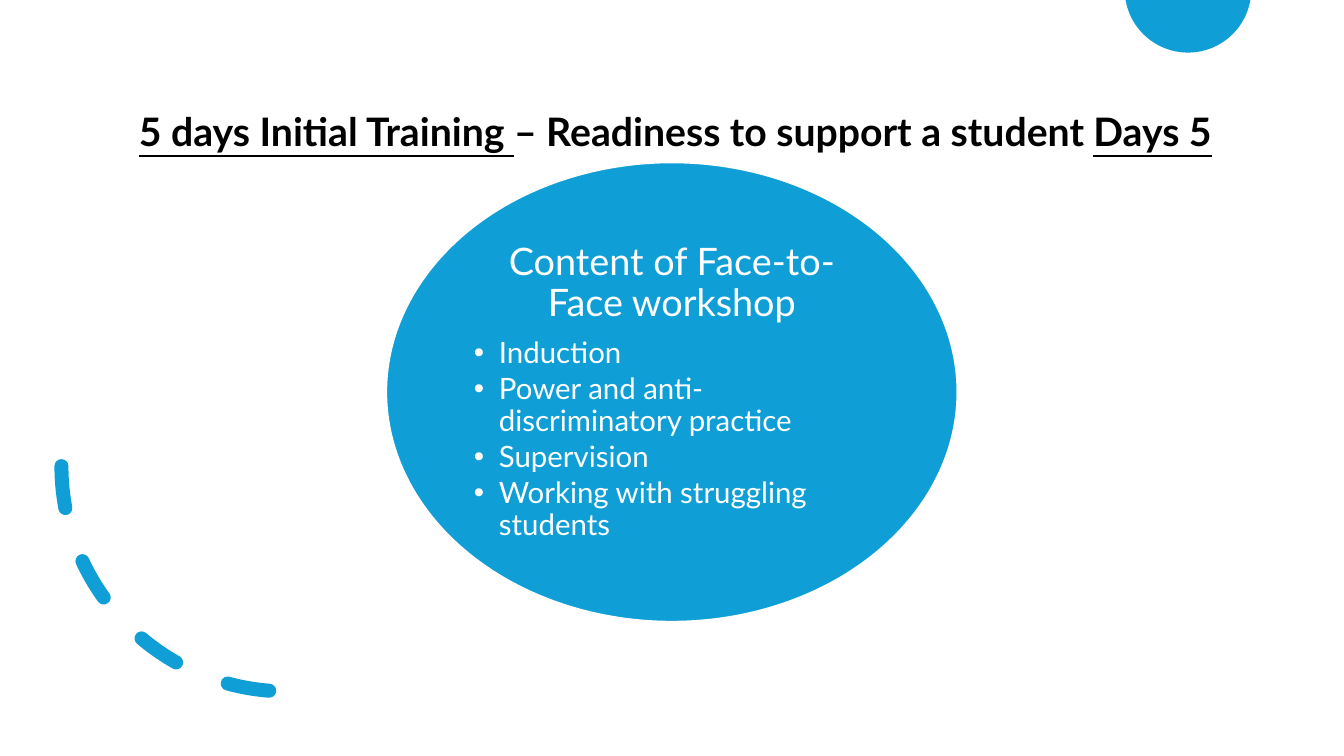
from dataclasses import dataclass
from math import asin, cos, pi, sin

from lxml import etree
from pptx import Presentation
from pptx.dml.color import RGBColor
from pptx.enum.dml import MSO_LINE
from pptx.enum.shapes import MSO_SHAPE
from pptx.enum.text import MSO_ANCHOR, MSO_AUTO_SIZE, PP_ALIGN
from pptx.oxml.ns import qn
from pptx.util import Pt

ARC, OVAL = MSO_SHAPE.ARC, MSO_SHAPE.OVAL
DASH = MSO_LINE.DASH
MIDDLE = MSO_ANCHOR.MIDDLE
GROW = MSO_AUTO_SIZE.SHAPE_TO_FIT_TEXT
LEFT, CENTER = PP_ALIGN.LEFT, PP_ALIGN.CENTER


@dataclass(frozen=True)
class Theme:
    blue: RGBColor = RGBColor(0x0F, 0x9E, 0xD5)
    white: RGBColor = RGBColor(0xFF, 0xFF, 0xFF)
    black: RGBColor = RGBColor(0, 0, 0)
    font: str = "Lato"
    title: float = 28
    head: float = 27
    item: float = 21


THEME = Theme()
TOPICS = [
    "Induction",
    "Power and anti-discriminatory practice",
    "Supervision",
    "Working with struggling students",
]


def add_box(slide, left, top, width, height, inset=None):
    box = slide.shapes.add_textbox(Pt(left), Pt(top), Pt(width), Pt(height))
    frame = box.text_frame
    frame.word_wrap = True
    if inset is not None:
        frame.margin_left = frame.margin_right = Pt(inset)
        frame.margin_top = frame.margin_bottom = Pt(inset)
    return frame


def set_para(para, align, line, after):
    para.alignment = align
    para.line_spacing = line
    para.space_before = Pt(0)
    para.space_after = Pt(after)


def add_run(para, text, size, color, bold=False, under=False):
    run = para.add_run()
    run.text = text
    font = run.font
    font.name, font.size = THEME.font, Pt(size)
    font.color.rgb = color
    font.bold, font.underline = bold, under


def add_bullet(para, indent):
    props = para._p.get_or_add_pPr()
    props.set("marL", str(Pt(indent)))
    props.set("indent", str(-Pt(indent)))
    etree.SubElement(props, qn("a:buFont")).set("typeface", "Arial")
    etree.SubElement(props, qn("a:buChar")).set("char", "•")


def add_cap(slide, mid, rise, radius):
    """Draw the part of a disc that shows below the top edge."""
    start = asin(rise / radius)
    steps = 90
    angles = [start + (pi - 2 * start) * i / steps for i in range(steps + 1)]
    points = [(Pt(mid + radius * cos(a)), Pt(max(0, radius * sin(a) - rise)))
              for a in angles]
    form = slide.shapes.build_freeform(*points[0])
    form.add_line_segments(points[1:], close=True)
    cap = form.convert_to_shape()
    cap.shadow.inherit = False
    cap.fill.solid()
    cap.fill.fore_color.rgb = THEME.blue
    cap.line.fill.background()


def add_arc(slide, left, top, size):
    arc = slide.shapes.add_shape(ARC, Pt(left), Pt(top), Pt(size), Pt(size))
    arc.shadow.inherit = False
    arc.rotation = 90
    arc._element.spPr.find(qn("a:xfrm")).set("flipV", "1")
    arc.fill.background()
    arc.line.color.rgb = THEME.blue
    arc.line.width = Pt(10)
    arc.line.dash_style = DASH
    arc.line._ln.set("cap", "rnd")


def add_oval(slide, left, top, width, height):
    oval = slide.shapes.add_shape(OVAL, Pt(left), Pt(top), Pt(width), Pt(height))
    oval.shadow.inherit = False
    oval.fill.solid()
    oval.fill.fore_color.rgb = THEME.blue
    oval.line.color.rgb = THEME.white
    oval.line.width = Pt(1.5)


def add_topics(slide):
    frame = add_box(slide, 335.5, 164.2, 288.7, 231.8, inset=2.9)
    frame.vertical_anchor = MIDDLE
    head = frame.paragraphs[0]
    set_para(head, CENTER, 0.9, 0.35 * THEME.head)
    add_run(head, "Content of Face-to-Face workshop", THEME.head, THEME.white)
    for topic in TOPICS:
        para = frame.add_paragraph()
        para.level = 1
        set_para(para, LEFT, 0.9, 0.15 * THEME.item)
        add_bullet(para, 18)
        add_run(para, topic, THEME.item, THEME.white)


def add_title(slide):
    frame = add_box(slide, 92.2, 70.6, 830.2, 42.5)
    frame.auto_size = GROW
    para = frame.paragraphs[0]
    set_para(para, LEFT, 1.07, 8)
    for text, under in [("5 days Initial Training ", True),
                        ("– Readiness to support a student ", False),
                        ("Days 5", True)]:
        add_run(para, text, THEME.title, THEME.black, True, under)


def main():
    deck = Presentation()
    deck.slide_width, deck.slide_height = Pt(960), Pt(540)
    slide = deck.slides.add_slide(deck.slide_layouts[6])
    # Corner decoration
    add_cap(slide, 848.6, 7.6, 45.2)
    add_arc(slide, 43.9, 172.1, 321.8)
    # Workshop content
    add_oval(slide, 275.8, 115.9, 408.2, 328.3)
    add_topics(slide)
    # Heading
    add_title(slide)
    deck.save("out.pptx")


if __name__ == "__main__":
    main()
